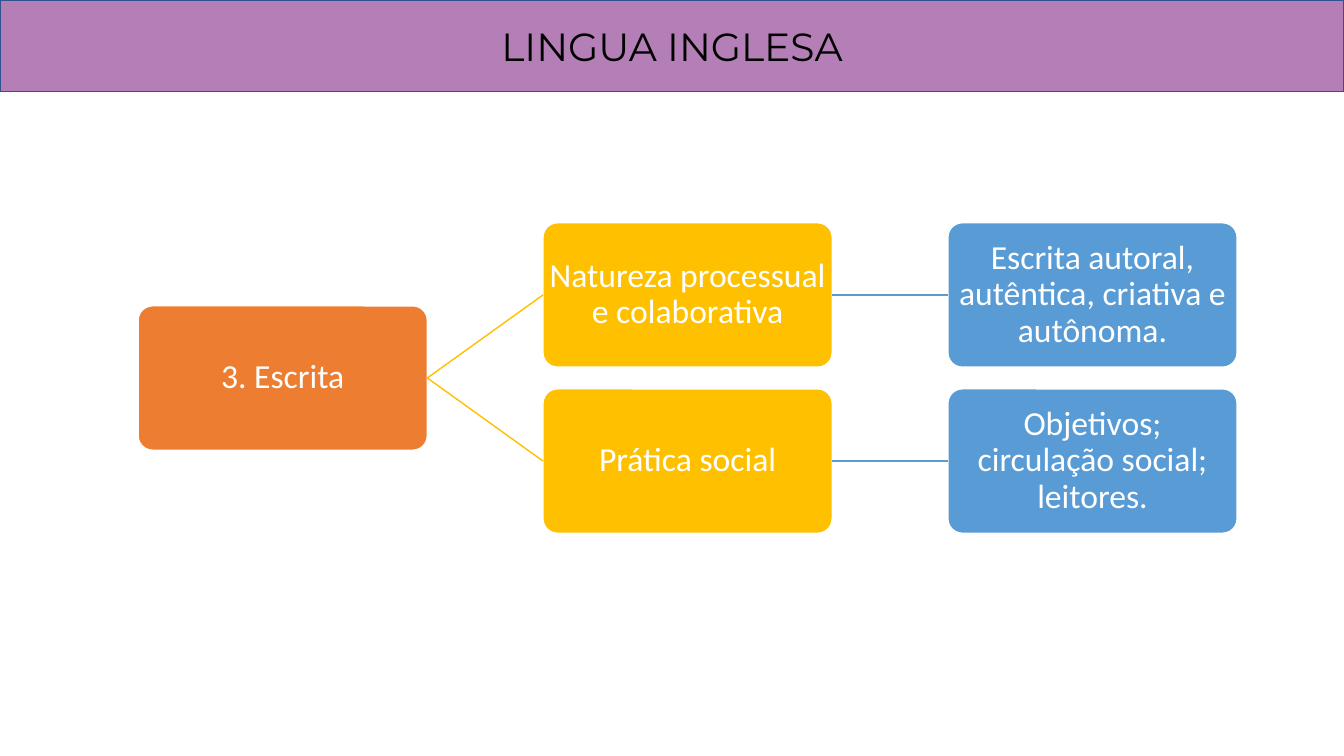
from lxml import etree
from pptx import Presentation, util as u
from pptx.dml.color import RGBColor
from pptx.enum import shapes, text
from pptx.oxml.ns import qn

PLUM = RGBColor(0xB4, 0x7E, 0xB6)
NAVY = RGBColor(0x31, 0x53, 0x8F)
ORANGE = RGBColor(0xED, 0x7D, 0x31)
GOLD = RGBColor(0xFF, 0xC0, 0x00)
BLUE = RGBColor(0x59, 0x9B, 0xD5)
WHITE = RGBColor(0xFF, 0xFF, 0xFF)
BLACK = RGBColor(0, 0, 0)

WIDE, HIGH = 13.33, 7.5
LEVELS = (ORANGE, GOLD, BLUE)  # one colour per column
ROOT = "3. Escrita"
ROWS = [
    ("Natureza processual e colaborativa",
     "Escrita autoral, autêntica, criativa e autônoma."),
    ("Prática social", "Objetivos; circulação social; leitores."),
]


def paint(shape, fill, line):
    shape.fill.solid()
    shape.fill.fore_color.rgb = fill
    shape.line.color.rgb = line
    shape.line.width = u.Pt(1)


def style(par, font, size, color):
    par.alignment = text.PP_ALIGN.CENTER
    par.font.name = font
    par.font.size = u.Pt(size)
    par.font.color.rgb = color


def banner(slide, words, left, top, width, height):
    title = slide.shapes.title
    title.left, title.top = u.Inches(left), u.Inches(top)
    title.width, title.height = u.Inches(width), u.Inches(height)
    paint(title, PLUM, NAVY)
    frame = title.text_frame
    frame.text = words
    frame.auto_size = text.MSO_AUTO_SIZE.NONE
    frame.vertical_anchor = text.MSO_ANCHOR.MIDDLE
    style(frame.paragraphs[0], "Montserrat", 28, BLACK)


def node(slide, words, fill, left, top, width, height):
    box = slide.shapes.add_shape(
        shapes.MSO_SHAPE.ROUNDED_RECTANGLE, u.Inches(left), u.Inches(top),
        u.Inches(width), u.Inches(height))
    box.adjustments[0] = 0.1
    box.shadow.inherit = False
    paint(box, fill, WHITE)
    frame = box.text_frame
    frame.text = words
    frame.word_wrap = True
    frame.vertical_anchor = text.MSO_ANCHOR.MIDDLE
    frame.margin_left = frame.margin_right = u.Inches(0.01)
    frame.margin_top = frame.margin_bottom = u.Inches(0.02)
    par = frame.paragraphs[0]
    par.line_spacing = 0.9
    style(par, "Calibri", 24, WHITE)
    return box


def link(slide, start, end, color):
    line = slide.shapes.add_connector(shapes.MSO_CONNECTOR.STRAIGHT, 0, 0, 0, 0)
    line.begin_connect(start, 3)  # right side
    line.end_connect(end, 1)  # left side
    line.line.color.rgb = color
    line.line.width = u.Pt(1)
    etree.SubElement(line._element.spPr, qn("a:effectLst"))


def tree(slide, left, top, width, height):
    # Three columns with gaps of 0.4 box; rows with gaps of 0.15 box
    wide = width / (3 + 2 * 0.4)
    high = height / (len(ROWS) + 0.15 * (len(ROWS) - 1))

    def place(words, col, y):
        return node(slide, words, LEVELS[col], left + col * wide * 1.4, y, wide, high)

    root = place(ROOT, 0, top + (height - high) / 2)
    for row, names in enumerate(ROWS):
        last = root
        for col, words in enumerate(names, 1):
            box = place(words, col, top + row * high * 1.15)
            link(slide, last, box, LEVELS[col])
            last = box


def main():
    deck = Presentation()
    deck.slide_width, deck.slide_height = u.Inches(WIDE), u.Inches(HIGH)
    slide = deck.slides.add_slide(deck.slide_layouts[5])
    banner(slide, "LINGUA INGLESA", 0, 0, WIDE, 0.91)
    tree(slide, 1.37, 2.21, 10.9, 3.08)
    deck.save("out.pptx")


if __name__ == "__main__":
    main()
